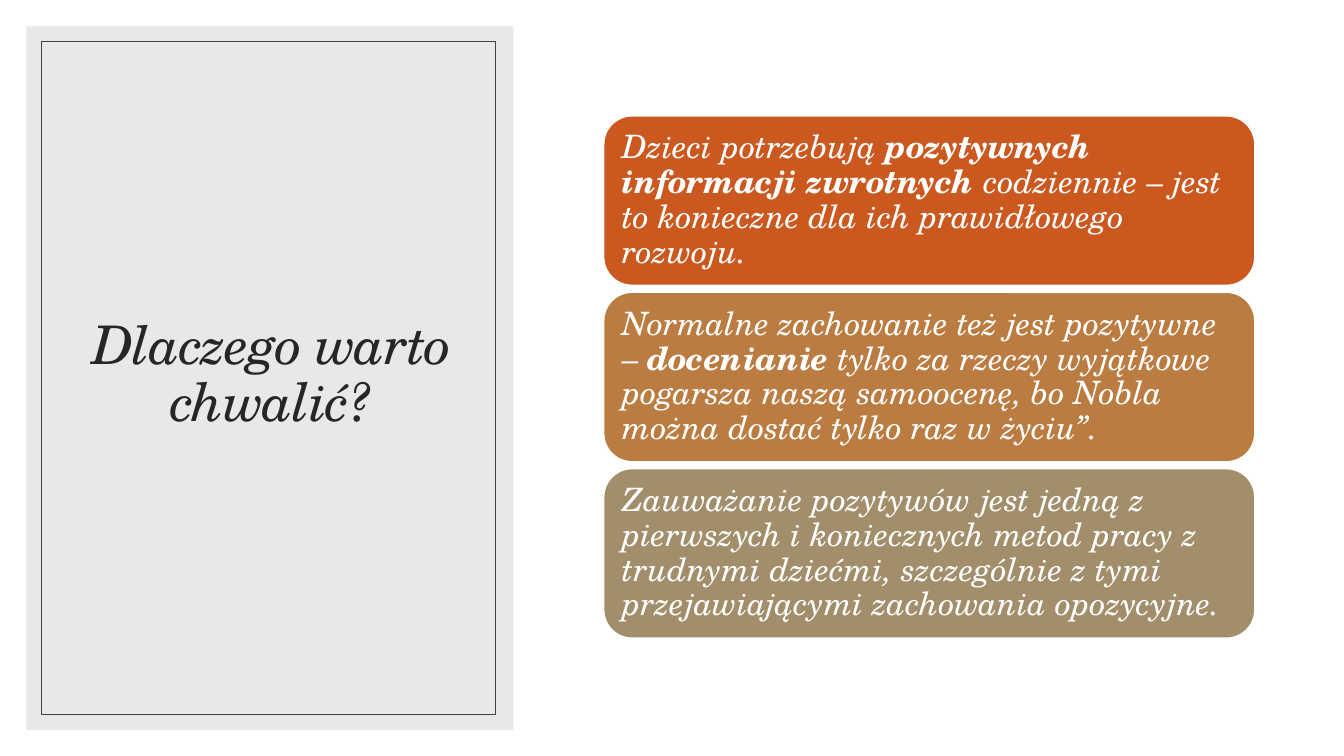
"""Build a slide with a framed title panel and three praise cards."""
from dataclasses import dataclass

from lxml import etree
from pptx import Presentation
from pptx.dml.color import RGBColor
from pptx.enum.shapes import MSO_SHAPE
from pptx.enum.text import MSO_ANCHOR, PP_ALIGN
from pptx.oxml.ns import qn
from pptx.shapes.autoshape import Shape
from pptx.slide import Slide
from pptx.util import Pt

COLORS = {
    "white": "FFFFFF",
    "panel": "D9D9D9",
    "frame": "404040",
    "title": "262626",
    "orange": "CB581F",
    "copper": "BA7C41",
    "olive": "A28E6A",
}
FONT = "TeX Gyre Schola"
CARD_LEFT, CARD_TOP = 431.3, 82.8
CARD_WIDTH, CARD_HEIGHT, CARD_STEP = 465, 121, 126
CARD_INSET = 7.2


@dataclass
class Box:
    left: float
    top: float
    width: float
    height: float
    kind: MSO_SHAPE = MSO_SHAPE.RECTANGLE
    fill: str | None = None
    line: str | None = None
    line_width: float = 0


@dataclass
class Card:
    fill: str
    before: str
    strong: str = ""
    after: str = ""


PANEL = Box(18.9, 18.9, 347.8, 502.4, fill="panel")
FRAME = Box(29.6, 29.6, 324.4, 480.7, line="frame", line_width=0.5)
TITLE = Box(45.4, 43.9, 296.6, 449.3)
CARDS = [
    Card("orange", "Dzieci potrzebują ", "pozytywnych informacji zwrotnych",
         " codziennie – jest to konieczne dla ich prawidłowego rozwoju."),
    Card("copper", "Normalne zachowanie też jest pozytywne – ", "docenianie",
         " tylko za rzeczy wyjątkowe pogarsza naszą samoocenę, "
         "bo Nobla można dostać tylko raz w życiu”."),
    Card("olive", "Zauważanie pozytywów jest jedną z pierwszych i koniecznych "
         "metod pracy z trudnymi dziećmi, szczególnie z tymi "
         "przejawiającymi zachowania opozycyjne."),
]


def rgb(name: str) -> RGBColor:
    return RGBColor.from_string(COLORS[name])


def draw_box(slide: Slide, box: Box) -> Shape:
    shape = slide.shapes.add_shape(
        box.kind, Pt(box.left), Pt(box.top), Pt(box.width), Pt(box.height))
    shape.shadow.inherit = False
    if box.fill:
        shape.fill.solid()
        shape.fill.fore_color.rgb = rgb(box.fill)
    else:
        shape.fill.background()
    if box.line:
        shape.line.color.rgb = rgb(box.line)
        shape.line.width = Pt(box.line_width)
    else:
        shape.line.fill.background()
    return shape


def set_opacity(shape: Shape, percent: int) -> None:
    color = shape.element.spPr.find(f"{qn('a:solidFill')}/{qn('a:srgbClr')}")
    etree.SubElement(color, qn("a:alpha")).set("val", str(percent * 1000))


def write_text(shape: Shape, parts: list[tuple[str, bool]], size: float,
               color: str, align: PP_ALIGN, spacing: float = 0) -> None:
    frame = shape.text_frame
    frame.word_wrap = True
    frame.vertical_anchor = MSO_ANCHOR.MIDDLE
    paragraph = frame.paragraphs[0]
    paragraph.alignment = align
    paragraph.line_spacing = 0.9
    for text, bold in parts:
        run = paragraph.add_run()
        run.text = text
        formats = {"name": FONT, "size": Pt(size), "italic": True, "bold": bold}
        for attribute, value in formats.items():
            setattr(run.font, attribute, value)
        run.font.color.rgb = rgb(color)
        if spacing:
            run._r.get_or_add_rPr().set("spc", str(round(spacing * 100)))


def draw_card(slide: Slide, index: int, card: Card) -> None:
    shape = draw_box(slide, Box(
        CARD_LEFT, CARD_TOP + index * CARD_STEP, CARD_WIDTH, CARD_HEIGHT,
        MSO_SHAPE.ROUNDED_RECTANGLE, card.fill, "white", 1))
    for side in ("left", "top", "right", "bottom"):
        setattr(shape.text_frame, f"margin_{side}", Pt(CARD_INSET))
    parts = [(card.before, False), (card.strong, True), (card.after, False)]
    write_text(shape, [part for part in parts if part[0]], 23, "white",
               PP_ALIGN.LEFT)


def main() -> None:
    presentation = Presentation()
    presentation.slide_width, presentation.slide_height = Pt(960), Pt(540)
    slide = presentation.slides.add_slide(presentation.slide_layouts[6])
    slide.background.fill.solid()
    slide.background.fill.fore_color.rgb = rgb("white")

    set_opacity(draw_box(slide, PANEL), 60)
    title = slide.shapes.add_textbox(
        Pt(TITLE.left), Pt(TITLE.top), Pt(TITLE.width), Pt(TITLE.height))
    write_text(title, [("Dlaczego warto chwalić?", False)], 38, "title",
               PP_ALIGN.CENTER, -0.7)
    draw_box(slide, FRAME)
    for index, card in enumerate(CARDS):
        draw_card(slide, index, card)
    presentation.save("out.pptx")


if __name__ == "__main__":
    main()
